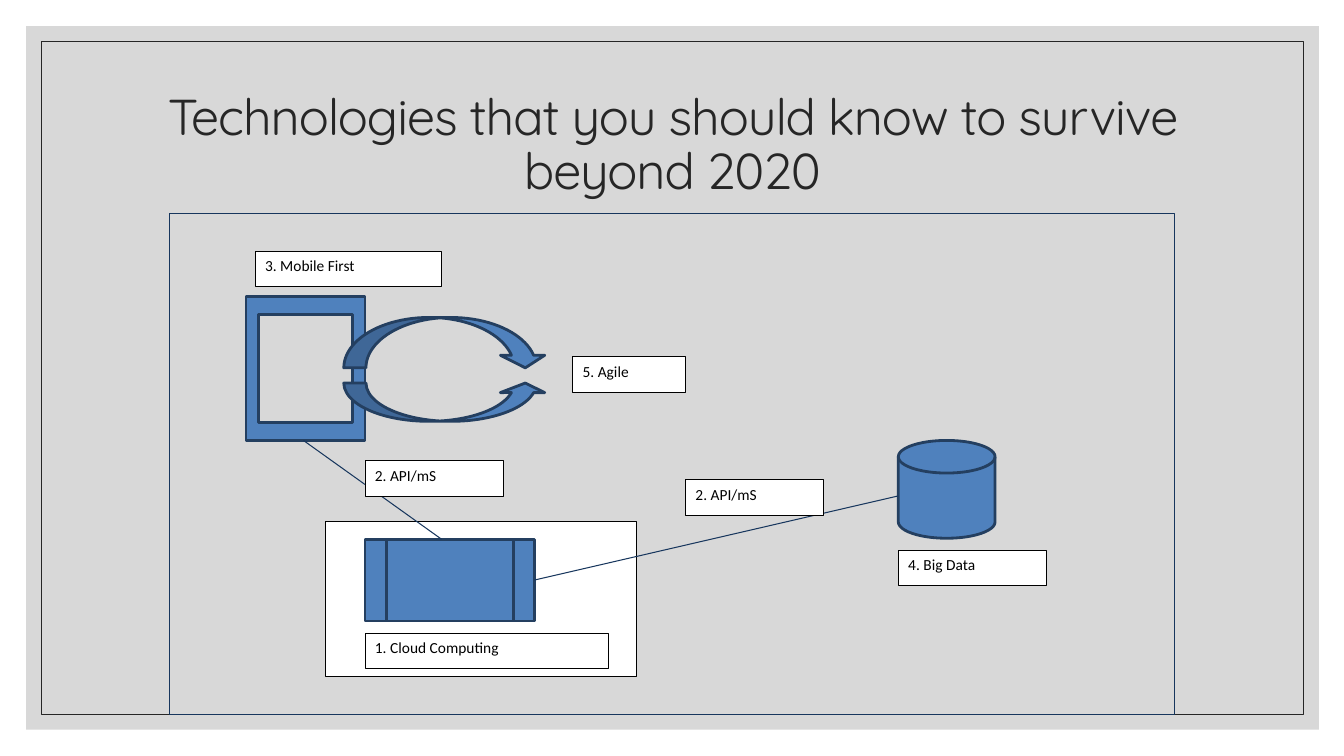
from lxml.etree import SubElement
from pptx import Presentation
from pptx.dml.color import RGBColor
from pptx.enum.shapes import MSO_CONNECTOR as Link, MSO_SHAPE as Preset
from pptx.enum.text import MSO_ANCHOR as Anchor, PP_ALIGN as Align
from pptx.oxml.ns import qn
from pptx.util import Inches, Pt

COLORS = {
    "paper": "FFFFFF",
    "mat": "BFBFBF",
    "ink": "262626",
    "black": "000000",
    "navy": "17365D",
    "blue": "4F81BD",
    "edge": "243F60",
}
COLUMNS, ROWS = 133.3, 75  # grid cells of a tenth of an inch


class Diagram:
    """Holds the style and the current slide; places are (column, row, columns, rows)."""

    def __init__(self, deck):
        self.slide = deck.slides.add_slide(deck.slide_layouts[6])
        self.shapes = self.slide.shapes
        self.cell_w = deck.slide_width / COLUMNS
        self.cell_h = deck.slide_height / ROWS

    def to_emu(self, *lengths):
        return [round(n * (self.cell_h if i % 2 else self.cell_w))
                for i, n in enumerate(lengths)]

    def color(self, name):
        return RGBColor.from_string(COLORS[name])

    def paint(self, shape, fill, line, width):
        shape.shadow.inherit = False
        if fill:
            shape.fill.solid()
            shape.fill.fore_color.rgb = self.color(fill)
        else:
            shape.fill.background()
        if line:
            shape.line.color.rgb = self.color(line)
            shape.line.width = Pt(width)
        else:
            shape.line.fill.background()
        return shape

    def add_text(self, frame, text, size, font, color, align):
        frame.word_wrap = True
        paragraph = frame.paragraphs[0]
        paragraph.alignment = align
        run = paragraph.add_run()
        run.text = text
        run.font.size, run.font.name = Pt(size), font
        run.font.color.rgb = self.color(color)
        return paragraph

    def box(self, place, fill=None, line=None, width=0.75, opacity=None):
        shape = self.shapes.add_shape(Preset.RECTANGLE, *self.to_emu(*place))
        self.paint(shape, fill, line, width)
        if opacity:
            tint = shape.element.spPr.find(qn("a:solidFill"))[0]
            SubElement(tint, qn("a:alpha"), val=str(opacity * 1000))
        return shape

    def symbol(self, preset, place, adjustments=(), flipped=False):
        shape = self.shapes.add_shape(preset, *self.to_emu(*place))
        for i, value in enumerate(adjustments):
            shape.adjustments[i] = value
        if flipped:
            shape.element.spPr.xfrm.set("flipV", "1")
        return self.paint(shape, "blue", "edge", 2)

    def window(self, place, rim_columns, rim_rows):
        x, y, w, h = self.to_emu(*place)
        dx, dy = self.to_emu(rim_columns, rim_rows)
        right, bottom = x + w, y + h
        outline = self.shapes.build_freeform(x, y)
        outline.add_line_segments([(right, y), (right, bottom), (x, bottom)])
        outline.move_to(x + dx, y + dy)
        outline.add_line_segments([(x + dx, bottom - dy), (right - dx, bottom - dy),
                                   (right - dx, y + dy)])
        return self.paint(outline.convert_to_shape(), "blue", "edge", 2)

    def label(self, text, column, row, columns):
        shape = self.box((column, row, columns, 3.5), "paper", "black", 0.5)
        shape.text_frame.vertical_anchor = Anchor.TOP
        self.add_text(shape.text_frame, text, 11, "Calibri", "black", Align.LEFT)

    def title(self, text, place):
        heading = self.shapes.add_textbox(*self.to_emu(*place))
        frame = heading.text_frame
        frame.vertical_anchor = Anchor.MIDDLE
        paragraph = self.add_text(frame, text, 36, "Quicksand", "ink", Align.CENTER)
        paragraph.line_spacing = 0.9
        for style in heading.element.iter(qn("a:rPr")):
            style.set("spc", "-70")

    def link(self, start, end, source=None, side=None):
        line = self.shapes.add_connector(Link.STRAIGHT, *self.to_emu(*start, *end))
        if source is not None:
            line.begin_connect(source, side)
        line.line.color.rgb = self.color("navy")
        line.line.width = Pt(0.75)
        SubElement(line.element.spPr, qn("a:effectLst"))


def main():
    deck = Presentation()
    deck.slide_width, deck.slide_height = Inches(13.33), Inches(7.5)
    diagram = Diagram(deck)

    # Mat, border and title
    diagram.box((2.6, 2.6, 128.2, 69.8), "mat", opacity=60)
    diagram.box((4.1, 4.1, 125.2, 66.8), line="ink", width=0.5)
    diagram.title("Technologies that you should know to survive beyond 2020",
                  (11.7, 7, 110, 15))
    diagram.box((16.8, 21.2, 99.7, 49.7), line="navy")

    # Mobile device with the agile cycle
    diagram.window((24.4, 29.4, 11.8, 14.3), 1.25, 1.8)
    diagram.symbol(Preset.CURVED_UP_ARROW, (34.1, 31.5, 20.2, 5),
                   (0.44, 0.88, 0.25), flipped=True)
    diagram.symbol(Preset.CURVED_UP_ARROW, (34.1, 38, 20.2, 3.8), (0.58, 1.16, 0.25))

    # Data store and cloud
    diagram.symbol(Preset.FLOWCHART_MAGNETIC_DISK, (89.1, 43.7, 9.6, 9.7))
    diagram.box((32.3, 51.7, 30.8, 15.4), "paper", "black")
    cloud = diagram.symbol(Preset.FLOWCHART_PREDEFINED_PROCESS, (36.2, 53.5, 16.8, 8.1))

    # Links
    diagram.link((53, 57.5), (89.1, 49.2), cloud, 3)
    diagram.link((30.1, 43.7), (43.8, 53.5))

    # Labels
    for text, column, row, columns in (
        ("3. Mobile First", 25.3, 24.9, 18.5),
        ("5. Agile", 56.8, 35.4, 11.2),
        ("1. Cloud Computing", 36.2, 62.8, 24.1),
        ("2. API/mS", 68, 47.6, 13.7),
        ("2. API/mS", 36.2, 45.7, 13.7),
        ("4. Big Data", 89.1, 54.6, 14.7),
    ):
        diagram.label(text, column, row, columns)

    deck.save("out.pptx")


if __name__ == "__main__":
    main()
